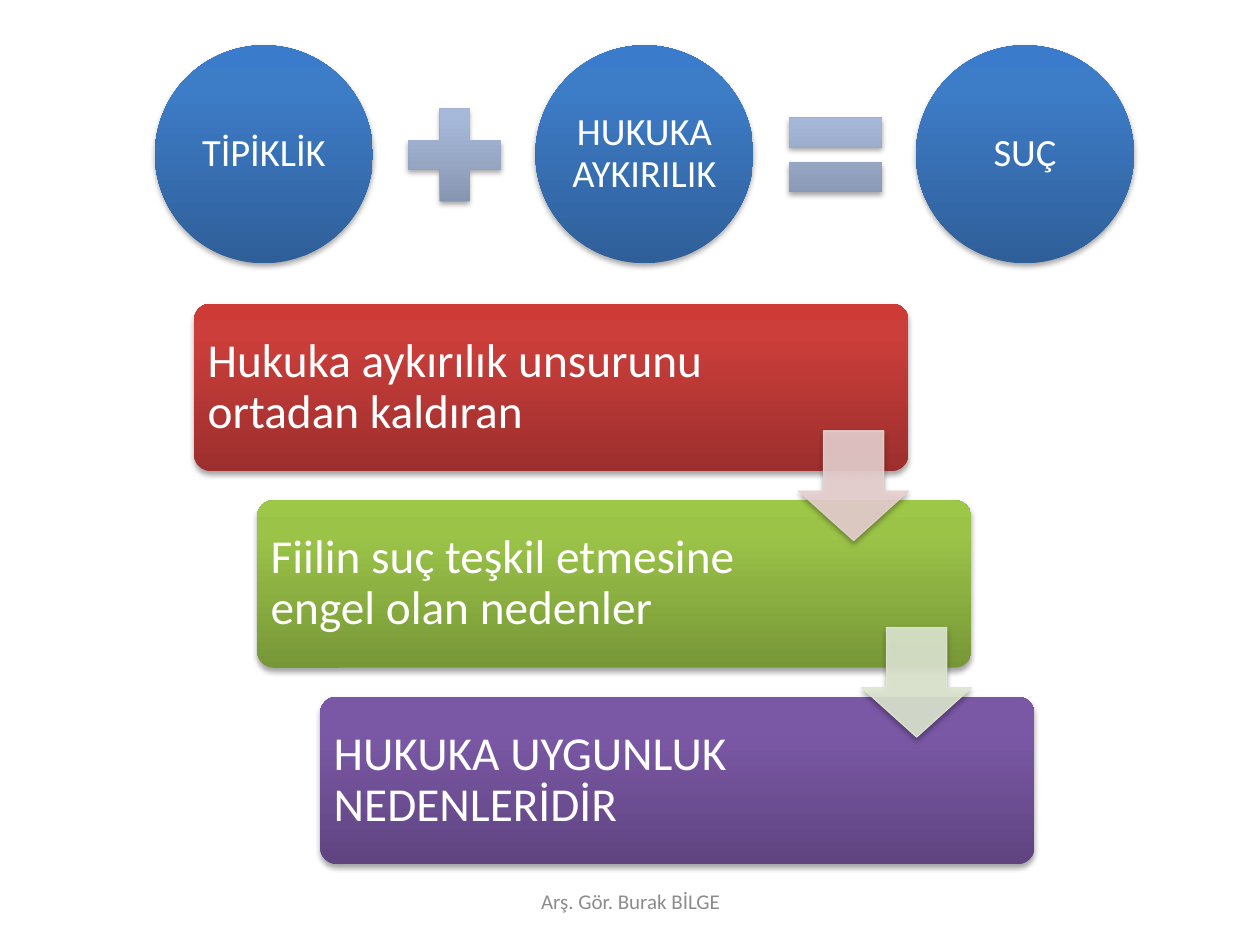
from lxml.etree import SubElement
from pptx import Presentation
from pptx.dml.color import RGBColor
from pptx.enum.shapes import MSO_SHAPE as Shape
from pptx.enum.text import MSO_ANCHOR as Anchor, PP_ALIGN as Align
from pptx.oxml.ns import qn
from pptx.util import Inches, Pt

WHITE = RGBColor(0xFF, 0xFF, 0xFF)
GREY = RGBColor(0x8C, 0x8C, 0x8C)
BLACK = RGBColor(0, 0, 0)
PINK = RGBColor(0xE8, 0xD0, 0xD0)
PALE_GREEN = RGBColor(0xDE, 0xE7, 0xD1)

# Gradients run from the dark bottom to the light top
BLUE = (RGBColor(0x2F, 0x5F, 0x99), RGBColor(0x3D, 0x7C, 0xC7), RGBColor(0x3A, 0x7C, 0xCB))
STEEL = (RGBColor(0x81, 0x8F, 0xA8), RGBColor(0xA7, 0xB9, 0xDA), RGBColor(0xA7, 0xBA, 0xDC))
RED = (RGBColor(0x9C, 0x2F, 0x2D), RGBColor(0xCB, 0x3E, 0x3A), RGBColor(0xCE, 0x3B, 0x37))
GREEN = (RGBColor(0x77, 0x97, 0x37), RGBColor(0x9B, 0xC3, 0x48), RGBColor(0x9D, 0xC7, 0x46))
PURPLE = (RGBColor(0x5F, 0x44, 0x80), RGBColor(0x7B, 0x58, 0xA6), RGBColor(0x7C, 0x57, 0xA8))
STOPS = (0, 80, 100)


def add_color(parent, color, alpha=None):
    node = SubElement(parent, qn("a:srgbClr"), val=str(color))
    if alpha is not None:
        SubElement(node, qn("a:alpha"), val=str(alpha * 1000))


class SlideBuilder:
    font = "Calibri"

    def __init__(self, page):
        self.page = page

    def shape(self, kind, left, top, width, height):
        """Add a preset shape with the common soft shadow."""
        shape = self.page.shapes.add_shape(
            kind, Inches(left), Inches(top), Inches(width), Inches(height))
        shape.line.fill.background()
        shape.shadow.inherit = False
        effects = shape.element.spPr.find(qn("a:effectLst"))
        shadow = SubElement(effects, qn("a:outerShdw"), blurRad="40000",
                            dist="23000", dir="5400000", rotWithShape="0")
        add_color(shadow, BLACK, 35)
        return shape

    def gradient_shape(self, kind, left, top, width, height, colors):
        shape = self.shape(kind, left, top, width, height)
        shape.fill.gradient()
        shape.fill.gradient_angle = 90
        stop_list = shape.element.spPr.find(qn("a:gradFill")).find(qn("a:gsLst"))
        for stop in list(stop_list):
            stop_list.remove(stop)
        for position, color in zip(STOPS, colors):
            add_color(SubElement(stop_list, qn("a:gs"), pos=str(position * 1000)), color)
        return shape

    def add_text(self, shape, text, size, color=WHITE, align=Align.CENTER,
                 insets=(0.1, 0.05, 0.1, 0.05), spacing=1.0):
        frame = shape.text_frame
        frame.word_wrap = True
        frame.vertical_anchor = Anchor.MIDDLE
        (frame.margin_left, frame.margin_top,
         frame.margin_right, frame.margin_bottom) = map(Inches, insets)
        para = frame.paragraphs[0]
        para.alignment = align
        para.line_spacing = spacing
        span = para.add_run()
        span.text = text
        span.font.name = self.font
        span.font.size = Pt(size)
        span.font.color.rgb = color

    def circle(self, left, top, size, text):
        circle = self.gradient_shape(Shape.OVAL, left, top, size, size, BLUE)
        self.add_text(circle, text, 22, insets=(0.03,) * 4, spacing=0.9)

    def step(self, left, top, text, colors):
        box = self.gradient_shape(Shape.ROUNDED_RECTANGLE, left, top, 5.67, 1.33, colors)
        box.adjustments[0] = 0.1
        # The wide right inset keeps the text clear of the arrow
        self.add_text(box, text, 27, align=Align.LEFT,
                      insets=(0.07, 0.07, 1.43, 0.07), spacing=0.9)

    def arrow(self, left, top, color):
        arrow = self.shape(Shape.DOWN_ARROW, left, top, 0.87, 0.87)
        arrow.adjustments[0], arrow.adjustments[1] = 0.55, 0.45
        arrow.line.width = Pt(0.75)
        for fill in (arrow.fill, arrow.line.fill):
            fill.solid()
            fill.fore_color.rgb = color
        for node in arrow.element.spPr.findall(".//" + qn("a:solidFill")):
            SubElement(node[0], qn("a:alpha"), val="90000")

    def label(self, left, top, width, height, text, size, color):
        box = self.page.shapes.add_textbox(
            Inches(left), Inches(top), Inches(width), Inches(height))
        self.add_text(box, text, size, color)


def main():
    deck = Presentation()
    deck.slide_width, deck.slide_height = Inches(10), Inches(7.5)
    builder = SlideBuilder(deck.slides.add_slide(deck.slide_layouts[6]))

    # Equation: circles with signs between them
    pitch = 3.02
    for i, text in enumerate(("TİPİKLİK", "HUKUKA AYKIRILIK", "SUÇ")):
        builder.circle(1.23 + i * pitch, 0.36, 1.73, text)
    for i, sign in enumerate((Shape.MATH_PLUS, Shape.MATH_EQUAL)):
        builder.gradient_shape(sign, 3.11 + i * pitch, 0.73, 1, 1, STEEL)

    # Footer
    builder.label(3.42, 6.95, 3.17, 0.4, "Arş. Gör. Burak BİLGE", 12, GREY)

    # Staircase of steps, then the arrows on top
    across, down = 0.5, 1.56
    steps = (
        ("Hukuka aykırılık unsurunu ortadan kaldıran", RED),
        ("Fiilin suç teşkil etmesine engel olan nedenler", GREEN),
        ("HUKUKA UYGUNLUK NEDENLERİDİR", PURPLE),
    )
    for i, (text, colors) in enumerate(steps):
        builder.step(1.54 + i * across, 2.41 + i * down, text, colors)
    for i, color in enumerate((PINK, PALE_GREEN)):
        builder.arrow(6.34 + i * across, 3.42 + i * down, color)

    deck.save("out.pptx")


if __name__ == "__main__":
    main()
